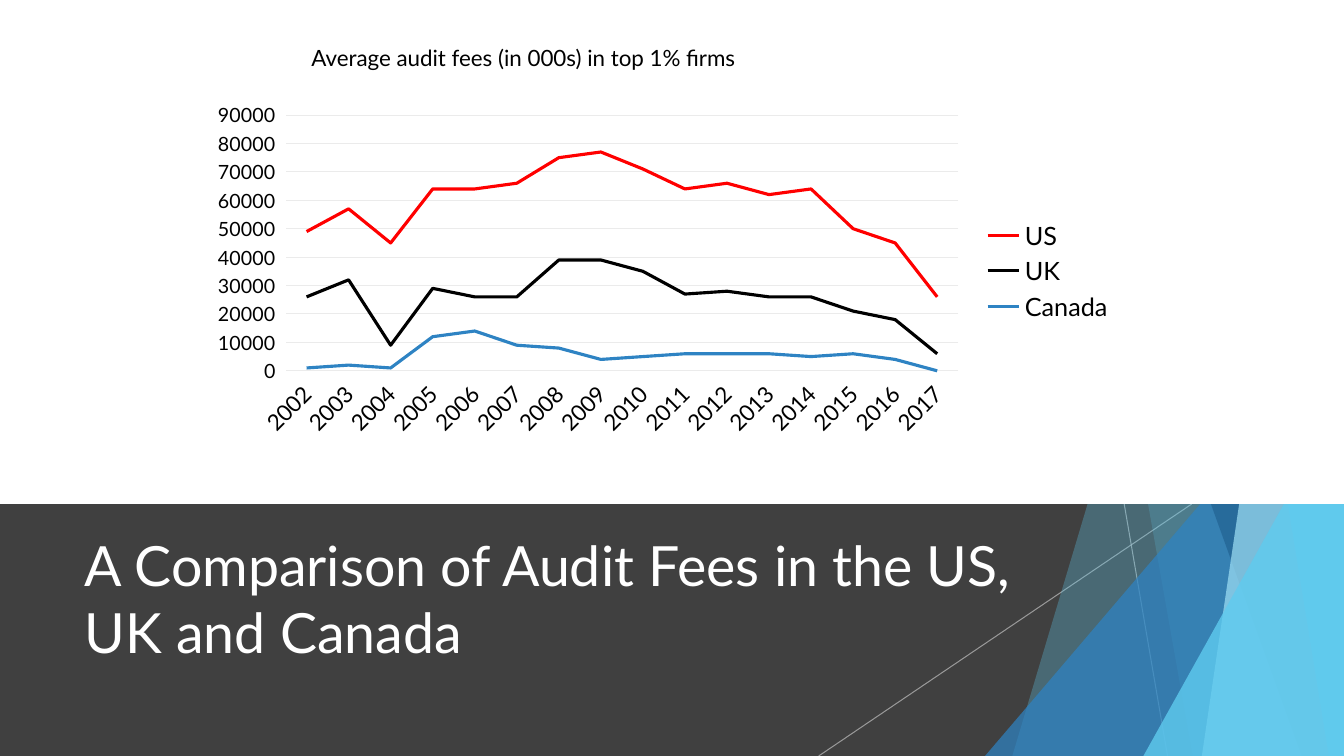
from lxml import etree
from pptx import Presentation
from pptx.chart.data import CategoryChartData
from pptx.dml.color import RGBColor
from pptx.enum.chart import XL_CHART_TYPE as Chart, XL_LEGEND_POSITION as Legend, XL_TICK_MARK as Tick
from pptx.enum.shapes import MSO_CONNECTOR as Connector, MSO_SHAPE as Shape
from pptx.enum.text import MSO_ANCHOR as Anchor, MSO_AUTO_SIZE as AutoSize, PP_ALIGN as Align
from pptx.oxml import parse_xml
from pptx.oxml.ns import nsdecls, qn
from pptx.util import Inches, Pt

FONT = "Lato"
WIDTH, HEIGHT = 13.33, 7.5
SPLIT = HEIGHT * 2 / 3
COLORS = {
    "white": "FFFFFF", "black": "000000", "band": "404040", "ray": "BFBFBF",
    "grid": "EBEBEB", "red": "FF0000", "blue": "2E83C3", "navy": "226292",
    "sky": "5FCBEF", "pale": "9FE0F5",
}
HEADLINE = "A Comparison of Audit Fees in the US, UK and Canada"
CAPTION = "Average audit fees (in 000s) in top 1% firms"
YEARS = [str(year) for year in range(2002, 2018)]
FEES = [
    ("Canada", "blue", [1000, 2000, 1000, 12000, 14000, 9000, 8000, 4000,
                        5000, 6000, 6000, 6000, 5000, 6000, 4000, None]),
    ("UK ", "black", [25000, 30000, 8000, 17000, 12000, 17000, 31000, 35000,
                      30000, 21000, 22000, 20000, 21000, 15000, 14000, 6000]),
    ("US", "red", [23000, 25000, 36000, 35000, 38000, 40000, 36000, 38000,
                   36000, 37000, 38000, 36000, 38000, 29000, 27000, 20000]),
]
RAYS = [(11.15, 11.58), (11.82, 8.12)]
FACETS = [
    ("slab", 12.28, 10.04, "sky", 30),
    ("slab", 10.5, 11.83, "sky", 20),
    ("wedge", 9.77, 3.33, "blue", 72),
    ("slab", 10.21, 12.91, "navy", 70),
    ("slab", 13.03, 11.92, "pale", 70),
    ("slab", 11.96, 13.18, "sky", 65),
    ("wedge", 11.34, 3.93, "sky", 80),
]


def rgb(name):
    return RGBColor.from_string(COLORS[name])


def set_alpha(shape, percent):
    for color in shape._element.spPr.iter(qn("a:srgbClr")):
        etree.SubElement(color, qn("a:alpha")).set("val", str(percent * 1000))


def paint(shape, color, alpha=100):
    shape.shadow.inherit = False
    shape.fill.solid()
    shape.fill.fore_color.rgb = rgb(color)
    shape.line.fill.background()
    if alpha < 100:
        set_alpha(shape, alpha)


def box(shapes, kind, left, top, right, bottom):
    return shapes.add_shape(kind, Inches(left), Inches(top),
                            Inches(right - left), Inches(bottom - top))


def style(font, size, color="black"):
    font.name, font.size, font.bold = FONT, Pt(size), False
    font.color.rgb = rgb(color)


def add_facets(shapes):
    for top_x, foot_x in RAYS:
        ray = shapes.add_connector(Connector.STRAIGHT, Inches(top_x), Inches(SPLIT),
                                   Inches(foot_x), Inches(HEIGHT))
        ray.line.color.rgb = rgb("ray")
        ray.line.width = Pt(0.75)
        set_alpha(ray, 70)
        etree.SubElement(ray._element.spPr, qn("a:effectLst"))
    for kind, first, second, color, alpha in FACETS:
        if kind == "slab":
            outline = shapes.build_freeform(Inches(first), 0)
            corners = [(WIDTH, 0), (WIDTH, HEIGHT), (second, HEIGHT)]
            outline.add_line_segments([(Inches(x), Inches(y)) for x, y in corners])
            facet = outline.convert_to_shape()
        else:
            facet = box(shapes, Shape.ISOSCELES_TRIANGLE, first, second, WIDTH, HEIGHT)
            facet.adjustments[0] = 1
        paint(facet, color, alpha)


def add_headline(shapes):
    headline = shapes.title
    shapes._spTree.append(headline._element)
    headline.left, headline.top = Inches(0.74), Inches(5.21)
    headline.width, headline.height = Inches(9.4), Inches(1.44)
    frame = headline.text_frame
    frame.text = HEADLINE
    frame.word_wrap = True
    frame.auto_size = AutoSize.NONE
    frame.vertical_anchor = Anchor.MIDDLE
    frame.paragraphs[0].alignment = Align.LEFT
    style(frame.paragraphs[0].runs[0].font, 39.6, "white")


def add_caption(shapes):
    frame = shapes.add_textbox(Inches(2.99), Inches(0.39), Inches(8.16), Inches(0.37)).text_frame
    frame.word_wrap = True
    frame.text = CAPTION
    style(frame.paragraphs[0].runs[0].font, 16)


def add_fees(shapes):
    data = CategoryChartData()
    data.categories = YEARS
    for country, _, values in FEES:
        data.add_series(country, values)
    chart = shapes.add_chart(Chart.LINE_STACKED, Inches(2.01), Inches(0.97),
                             Inches(9.14), Inches(3.43), data).chart
    style(chart.font, 18)
    chart.has_title = False
    chart.has_legend = True
    chart.legend.position = Legend.RIGHT
    chart.legend.include_in_layout = False
    style(chart.legend.font, 18)
    for series, (_, color, _) in zip(chart.plots[0].series, FEES):
        series.smooth = False
        series.format.line.color.rgb = rgb(color)
        series.format.line.width = Pt(2.25)

    years, amounts = chart.category_axis, chart.value_axis
    for axis, size in ((years, 16), (amounts, 14)):
        style(axis.tick_labels.font, size)
        axis.format.line.fill.background()
        axis.major_tick_mark = Tick.OUTSIDE
        axis.minor_tick_mark = Tick.NONE
    years.has_major_gridlines = False
    years._element.find(qn("c:txPr")).find(qn("a:bodyPr")).set("rot", "-2700000")
    amounts.minimum_scale, amounts.maximum_scale, amounts.major_unit = 0, 90000, 10000
    amounts.tick_labels.number_format = "General"
    amounts.tick_labels.number_format_is_linked = False
    grid = amounts.major_gridlines.format.line
    grid.color.rgb, grid.width = rgb("grid"), Pt(0.75)

    chart_xml = chart._chartSpace.chart
    chart_xml.find(qn("c:dispBlanksAs")).set("val", "zero")
    plot_area = chart_xml.plotArea
    for old in plot_area.findall(qn("c:layout")):
        plot_area.remove(old)
    places = [("layoutTarget", "inner"), ("xMode", "edge"), ("yMode", "edge"),
              ("x", 0.09), ("y", 0.05), ("w", 0.73), ("h", 0.74)]
    inner = "".join(f'<c:{tag} val="{value}"/>' for tag, value in places)
    plot_area.insert(0, parse_xml(
        f'<c:layout {nsdecls("c")}><c:manualLayout>{inner}</c:manualLayout></c:layout>'))


def main():
    deck = Presentation()
    deck.slide_width, deck.slide_height = Inches(WIDTH), Inches(HEIGHT)
    shapes = deck.slides.add_slide(deck.slide_layouts[5]).shapes
    paint(box(shapes, Shape.RECTANGLE, 0, SPLIT, WIDTH, HEIGHT), "band")
    add_facets(shapes)
    add_headline(shapes)
    paint(box(shapes, Shape.RECTANGLE, 0, 0, WIDTH, SPLIT), "white")
    add_caption(shapes)
    add_fees(shapes)
    deck.save("out.pptx")


if __name__ == "__main__":
    main()
